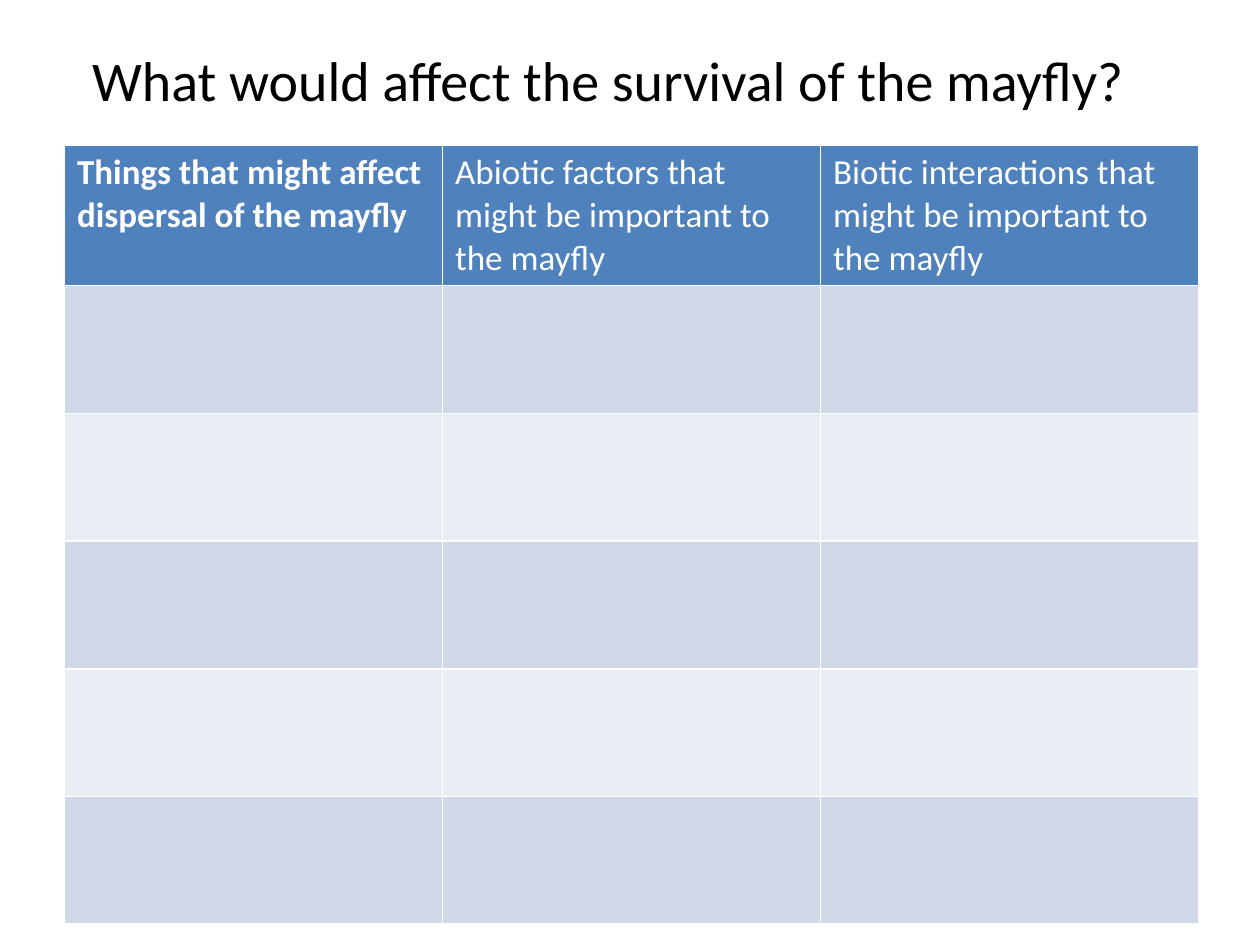
from lxml.etree import SubElement
from pptx import Presentation
from pptx.dml.color import RGBColor
from pptx.enum.text import MSO_ANCHOR, PP_ALIGN
from pptx.oxml.ns import qn
from pptx.util import Cm, Pt

BLACK = RGBColor(0x00, 0x00, 0x00)
WHITE = RGBColor(0xFF, 0xFF, 0xFF)
HEADER_BLUE = RGBColor(0x4F, 0x81, 0xBD)
BAND_DARK = RGBColor(0xD0, 0xD8, 0xE8)
BAND_LIGHT = RGBColor(0xE9, 0xED, 0xF4)

TITLE = "What would affect the survival of the mayfly?"
HEADINGS = [
    "Things that might affect dispersal of the mayfly",
    "Abiotic factors that might be important to the mayfly",
    "Biotic interactions that might be important to the mayfly",
]
BODY_ROWS = 5
HEADER_HEIGHT = Cm(2.84)


def add_span(para, text, size, color, bold=False):
    """Add one styled run to a paragraph."""
    span = para.add_run()
    span.text = text
    span.font.name = "Calibri"
    span.font.size = Pt(size)
    span.font.bold = bold
    span.font.color.rgb = color


def style_cell(cell, fill):
    """Give a cell thin white borders and a solid fill."""
    properties = cell._tc.get_or_add_tcPr()
    for side in ("lnL", "lnR", "lnT", "lnB"):
        line = SubElement(properties, qn(f"a:{side}"), w=str(Pt(1)))
        solid = SubElement(line, qn("a:solidFill"))
        SubElement(solid, qn("a:srgbClr"), val=str(WHITE))
    cell.fill.solid()
    cell.fill.fore_color.rgb = fill


def add_title(page, left, top, width, height):
    """Place the centred question in the given box."""
    box = page.shapes.add_textbox(left, top, width, height)
    frame = box.text_frame
    frame.word_wrap = True
    frame.vertical_anchor = MSO_ANCHOR.MIDDLE
    frame.margin_right = Cm(0.76)
    para = frame.paragraphs[0]
    para.alignment = PP_ALIGN.CENTER
    add_span(para, TITLE, 32, BLACK)


def add_factor_table(page, left, top, width, height):
    """Place the headed, banded answer table in the given box."""
    table = page.shapes.add_table(
        BODY_ROWS + 1, len(HEADINGS), left, top, width, height
    ).table
    for column in table.columns:
        column.width = width // len(HEADINGS)
    for index, row in enumerate(table.rows):
        if index == 0:
            row.height, fill = HEADER_HEIGHT, HEADER_BLUE
        else:
            row.height = (height - HEADER_HEIGHT) // BODY_ROWS
            fill = BAND_DARK if index % 2 else BAND_LIGHT
        for cell in row.cells:
            style_cell(cell, fill)
    for index, heading in enumerate(HEADINGS):
        para = table.cell(0, index).text_frame.paragraphs[0]
        add_span(para, heading, 20, WHITE, bold=index == 0)


def main():
    """Build and save the one-page deck."""
    deck = Presentation()
    deck.slide_width, deck.slide_height = Cm(25.4), Cm(19.05)
    page = deck.slides.add_slide(deck.slide_layouts[6])
    add_title(page, Cm(1.09), Cm(0), Cm(22.86), Cm(3.18))
    add_factor_table(page, Cm(1.3), Cm(2.92), Cm(22.86), Cm(15.71))
    deck.save("out.pptx")


if __name__ == "__main__":
    main()
